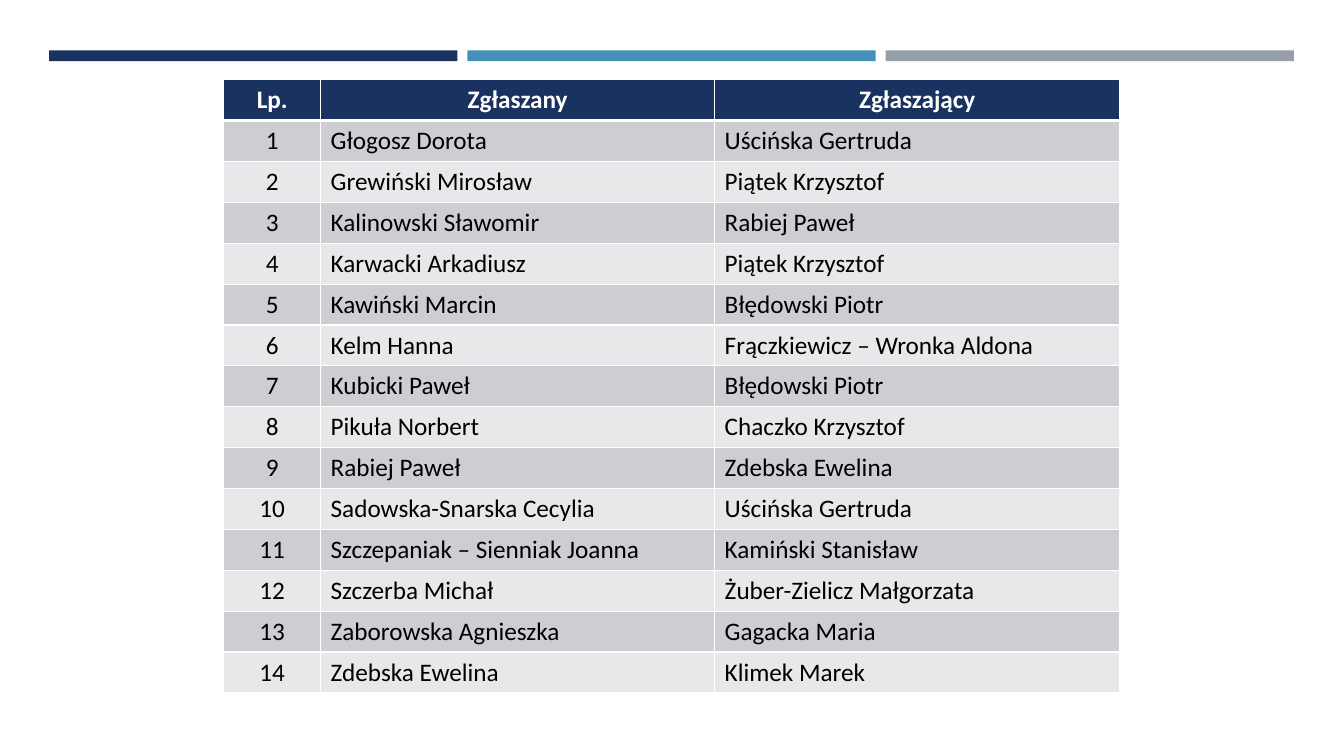
import dataclasses
import pptx
import pptx.util
import pptx.dml.color
import pptx.enum.shapes
import pptx.enum.text
import pptx.oxml
import pptx.oxml.ns

Cm = pptx.util.Cm


@dataclasses.dataclass(frozen=True)
class Theme:
    navy: str = "1A3260"
    blue: str = "4590B8"
    gray: str = "969FA7"
    dark: str = "CDCED2"
    light: str = "E8E8EA"
    white: str = "FFFFFF"
    black: str = "000000"
    font: str = "Calibri"
    size: int = 18
    thin: int = 1
    thick: int = 3


THEME = Theme()

HEADS = ("Lp.", "Zgłaszany", "Zgłaszający")
PAIRS = (
    ("Głogosz Dorota", "Uścińska Gertruda"),
    ("Grewiński Mirosław", "Piątek Krzysztof"),
    ("Kalinowski Sławomir", "Rabiej Paweł"),
    ("Karwacki Arkadiusz", "Piątek Krzysztof"),
    ("Kawiński Marcin", "Błędowski Piotr"),
    ("Kelm Hanna", "Frączkiewicz – Wronka Aldona"),
    ("Kubicki Paweł", "Błędowski Piotr"),
    ("Pikuła Norbert", "Chaczko Krzysztof"),
    ("Rabiej Paweł", "Zdebska Ewelina"),
    ("Sadowska-Snarska Cecylia", "Uścińska Gertruda"),
    ("Szczepaniak – Sienniak Joanna", "Kamiński Stanisław"),
    ("Szczerba Michał", "Żuber-Zielicz Małgorzata"),
    ("Zaborowska Agnieszka", "Gagacka Maria"),
    ("Zdebska Ewelina", "Klimek Marek"),
)


def paint(fill, color):
    fill.solid()
    fill.fore_color.rgb = pptx.dml.color.RGBColor.from_string(color)


def add_bars(slide, left, top, width, height, gap=0.25):
    colors = (THEME.navy, THEME.blue, THEME.gray)
    wide = (width - gap * (len(colors) - 1)) / len(colors)
    for i, color in enumerate(colors):
        bar = slide.shapes.add_shape(
            pptx.enum.shapes.MSO_SHAPE.RECTANGLE,
            Cm(left + i * (wide + gap)), Cm(top), Cm(wide), Cm(height))
        bar.shadow.inherit = False
        paint(bar.fill, color)
        bar.line.fill.background()


def add_edge(cell, side, points):
    space = pptx.oxml.ns.nsdecls("a")
    edge = pptx.oxml.parse_xml(
        f'<a:ln{side} {space} w="{pptx.util.Pt(points)}"><a:solidFill>'
        f'<a:srgbClr val="{THEME.white}"/></a:solidFill></a:ln{side}>')
    cell._tc.get_or_add_tcPr().append(edge)


def fill_cell(cell, text, row, col):
    head = row == 0
    for side in "LRTB":
        thick = (row, side) in ((0, "B"), (1, "T"))
        add_edge(cell, side, THEME.thick if thick else THEME.thin)
    band = THEME.dark if row % 2 else THEME.light
    paint(cell.fill, THEME.navy if head else band)
    para = cell.text_frame.paragraphs[0]
    if head or col == 0:
        para.alignment = pptx.enum.text.PP_ALIGN.CENTER
    run = para.add_run()
    run.text = text
    run.font.name = THEME.font
    run.font.size = pptx.util.Pt(THEME.size)
    run.font.bold = head
    paint(run.font.fill, THEME.white if head else THEME.black)


def add_list(slide, left, top, width, height):
    rows = [HEADS] + [(str(i), *pair) for i, pair in enumerate(PAIRS, 1)]
    table = slide.shapes.add_table(
        len(rows), len(HEADS), Cm(left), Cm(top), Cm(width), Cm(height)).table
    first, second = 2.44, 9.93
    for col, wide in zip(table.columns, (first, second, width - first - second)):
        col.width = Cm(wide)
    for r, texts in enumerate(rows):
        table.rows[r].height = Cm(height / len(rows))
        for c, text in enumerate(texts):
            fill_cell(table.cell(r, c), text, r, c)


def main():
    deck = pptx.Presentation()
    deck.slide_width, deck.slide_height = Cm(33.87), Cm(19.05)
    slide = deck.slides.add_slide(deck.slide_layouts[6])
    add_bars(slide, 1.24, 1.27, 31.37, 0.27)
    add_list(slide, 5.64, 2.01, 22.58, 15.44)
    deck.save("out.pptx")


if __name__ == "__main__":
    main()
